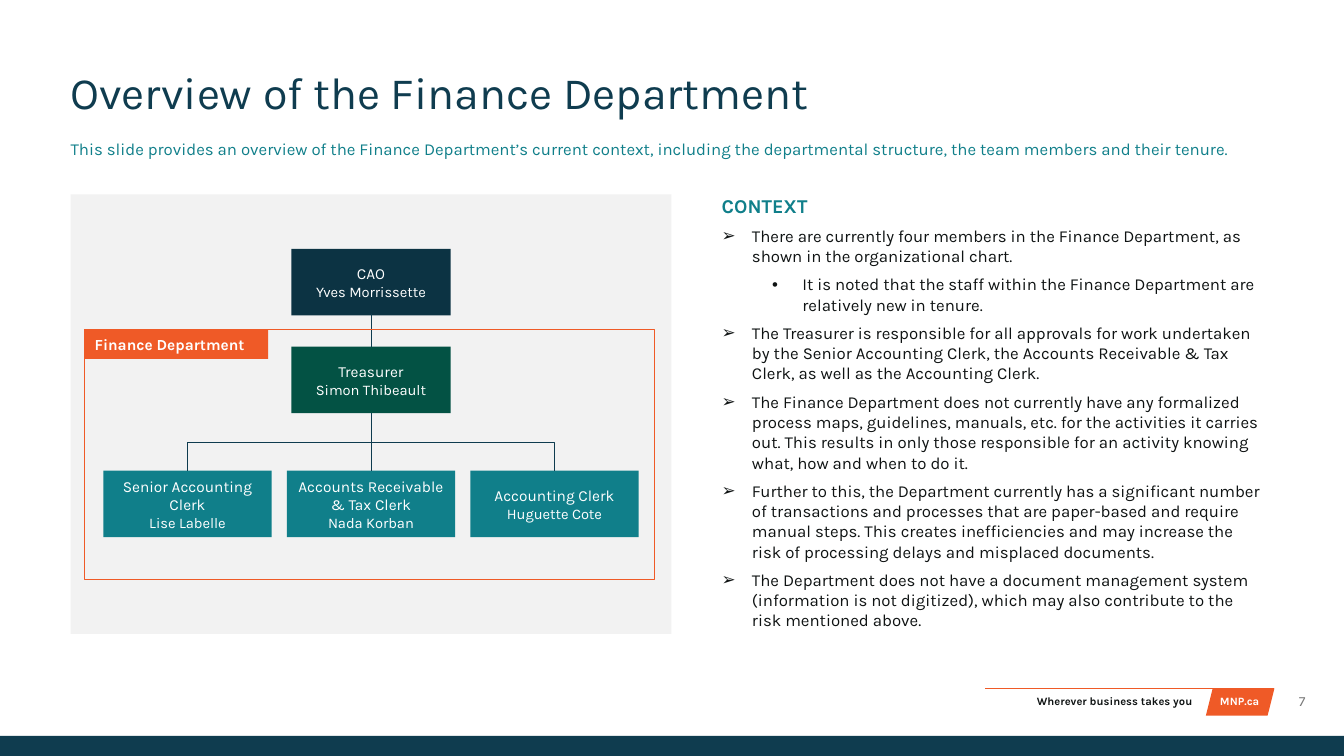
from lxml import etree
from pptx import Presentation
from pptx.dml.color import RGBColor
from pptx.enum.shapes import MSO_CONNECTOR, MSO_SHAPE
from pptx.enum.text import MSO_ANCHOR, PP_ALIGN
from pptx.oxml.ns import qn
from pptx.util import Inches, Pt

FONT = "Karla"
NAVY = RGBColor(0x0F, 0x3C, 0x4F)
DEEP = RGBColor(0x0C, 0x33, 0x43)
GREEN = RGBColor(0x03, 0x52, 0x44)
TEAL = RGBColor(0x10, 0x7F, 0x8A)
ORANGE = RGBColor(0xEF, 0x5A, 0x27)
PALE = RGBColor(0xF2, 0xF2, 0xF2)
INK = RGBColor(0x0F, 0x13, 0x13)
GREY = RGBColor(0x79, 0x79, 0x79)
WHITE = RGBColor(0xFF, 0xFF, 0xFF)

RECT, SLANT = MSO_SHAPE.RECTANGLE, MSO_SHAPE.PARALLELOGRAM
STRAIGHT, ELBOW = MSO_CONNECTOR.STRAIGHT, MSO_CONNECTOR.ELBOW
LEFT, CENTER, RIGHT = PP_ALIGN.LEFT, PP_ALIGN.CENTER, PP_ALIGN.RIGHT
TOP, MIDDLE = MSO_ANCHOR.TOP, MSO_ANCHOR.MIDDLE

# Text, bullet level
POINTS = [
    ("There are currently four members in the Finance Department, as shown in "
     "the organizational chart.", 0),
    ("It is noted that the staff within the Finance Department are relatively "
     "new in tenure.", 1),
    ("The Treasurer is responsible for all approvals for work undertaken by the "
     "Senior Accounting Clerk, the Accounts Receivable & Tax Clerk, as well as "
     "the Accounting Clerk.", 0),
    ("The Finance Department does not currently have any formalized process "
     "maps, guidelines, manuals, etc. for the activities it carries out. This "
     "results in only those responsible for an activity knowing what, how and "
     "when to do it.", 0),
    ("Further to this, the Department currently has a significant number of "
     "transactions and processes that are paper-based and require manual steps. "
     "This creates inefficiencies and may increase the risk of processing delays "
     "and misplaced documents.", 0),
    ("The Department does not have a document management system (information is "
     "not digitized), which may also contribute to the risk mentioned above.", 0),
]
CLERKS = [
    ("Senior Accounting Clerk", "Lise Labelle"),
    ("Accounts Receivable & Tax Clerk", "Nada Korban"),
    ("Accounting Clerk", "Huguette Cote"),
]


def add_run(para, text, size, color, bold=False):
    run = para.add_run()
    run.text = text
    font = run.font
    font.name, font.size, font.bold = FONT, Pt(size), bold
    font.color.rgb = color


def set_frame(frame, side, edge, anchor=TOP):
    frame.word_wrap = True
    frame.margin_left = frame.margin_right = Inches(side)
    frame.margin_top = frame.margin_bottom = Inches(edge)
    frame.vertical_anchor = anchor


def add_label(slide, box, text, size, color, align=LEFT, bold=False,
              edge=0.05, anchor=TOP):
    shape = slide.shapes.add_textbox(*map(Inches, box))
    set_frame(shape.text_frame, 0, edge, anchor)
    para = shape.text_frame.paragraphs[0]
    para.alignment = align
    add_run(para, text, size, color, bold)
    return para


def add_block(slide, box, fill=None, line=None, kind=RECT):
    shape = slide.shapes.add_shape(kind, *map(Inches, box))
    shape.shadow.inherit = False
    if fill is None:
        shape.fill.background()
    else:
        shape.fill.solid()
        shape.fill.fore_color.rgb = fill
    if line is None:
        shape.line.fill.background()
    else:
        shape.line.color.rgb = line
        shape.line.width = Pt(0.75)
    return shape


def add_card(slide, mid, top, width, fill, role, name):
    shape = add_block(slide, (mid - width / 2, top, width, 0.66), fill)
    frame = shape.text_frame
    set_frame(frame, 0.1, 0.05, MIDDLE)
    first, second = frame.paragraphs[0], frame.add_paragraph()
    first.alignment = second.alignment = CENTER
    add_run(first, role, 11, WHITE)
    add_run(second, name, 10.5, WHITE)


def add_line(slide, x1, y1, x2, y2, color=NAVY, width=0.5, kind=STRAIGHT):
    line = slide.shapes.add_connector(kind, *map(Inches, (x1, y1, x2, y2)))
    line.line.color.rgb = color
    line.line.width = Pt(width)
    etree.SubElement(line._element.spPr, qn("a:effectLst"))
    return line


def add_elbow(slide, x1, y1, x2, y2):
    """Join two points by a path that leaves and arrives vertically."""
    mid_x, mid_y = (x1 + x2) / 2, (y1 + y2) / 2
    side = 1 if x2 > x1 else -1
    dx, dy = side * (y2 - y1) / 2, abs(x2 - x1) / 2
    line = add_line(slide, mid_x + dx, mid_y - dy, mid_x - dx, mid_y + dy,
                    kind=ELBOW)
    turn = 270 if side > 0 else 90
    line._element.spPr.find(qn("a:xfrm")).set("rot", str(turn * 60000))


def add_bullet(para, level):
    para.level = level
    props = para._p.get_or_add_pPr()
    props.set("marL", str(Inches(0.3 + 0.5 * level)))
    props.set("indent", str(Inches(-0.3)))
    etree.SubElement(props, qn("a:buFont")).set("typeface", "Arial")
    etree.SubElement(props, qn("a:buChar")).set("char", "➢•"[level])


def add_footer(slide):
    add_block(slide, (11.96, 6.83, 0.68, 0.27), ORANGE, kind=SLANT)
    add_label(slide, (12, 6.84, 0.59, 0.24), "MNP.ca", 8, WHITE, CENTER, True)
    add_line(slide, 9.77, 6.83, 12.64, 6.83, ORANGE, 1)
    add_block(slide, (0, 7.3, 13.33, 0.2), NAVY)
    add_label(slide, (9.77, 6.84, 2.06, 0.24), "Wherever business takes you",
              8, INK, RIGHT, True)
    add_label(slide, (12.64, 6.82, 0.55, 0.27), "7", 10, GREY, CENTER,
              anchor=MIDDLE)


def add_head(slide):
    title = slide.shapes.title
    title.left, title.top = Inches(0.7), Inches(0.7)
    title.width, title.height = Inches(11.93), Inches(0.48)
    set_frame(title.text_frame, 0, 0)
    para = title.text_frame.paragraphs[0]
    para.alignment, para.line_spacing = LEFT, 0.9
    add_run(para, "Overview of the Finance Department", 32, NAVY)
    lead = add_label(
        slide, (0.7, 1.36, 11.94, 0.2),
        "This slide provides an overview of the Finance Department’s current "
        "context, including the departmental structure, the team members and "
        "their tenure.", 12, TEAL, edge=0)
    lead.line_spacing = 1.1


def add_context(slide):
    box = slide.shapes.add_textbox(*map(Inches, (7.06, 1.87, 5.58, 4.48)))
    frame = box.text_frame
    set_frame(frame, 0.1, 0.05)
    head = frame.paragraphs[0]
    head.space_after = Pt(6)
    add_run(head, "CONTEXT", 14, TEAL, True)
    for text, level in POINTS:
        para = frame.add_paragraph()
        add_bullet(para, level)
        para.space_after = Pt(6)
        add_run(para, text, 12, INK)


def add_chart(slide):
    mid, step = 3.68, 1.82
    add_block(slide, (0.7, 1.93, 5.96, 4.36), PALE)
    # Cards
    add_card(slide, mid, 2.47, 1.58, DEEP, "CAO", "Yves Morrissette")
    add_card(slide, mid, 3.44, 1.58, GREEN, "Treasurer", "Simon Thibeault")
    for i, (role, name) in enumerate(CLERKS):
        add_card(slide, mid + (i - 1) * step, 4.67, 1.67, TEAL, role, name)
    # Reporting lines
    add_elbow(slide, mid, 4.1, mid - step, 4.67)
    add_elbow(slide, mid, 4.1, mid + step, 4.67)
    add_line(slide, mid, 4.1, mid, 4.67)
    add_line(slide, mid, 3.12, mid, 3.44)
    # Department frame and tag
    add_block(slide, (0.84, 3.27, 5.65, 2.48), line=ORANGE)
    tag = add_block(slide, (0.84, 3.27, 1.82, 0.29), ORANGE)
    set_frame(tag.text_frame, 0.1, 0.05, MIDDLE)
    para = tag.text_frame.paragraphs[0]
    para.alignment = LEFT
    add_run(para, "Finance Department", 11, WHITE, True)


def main():
    deck = Presentation()
    deck.slide_width, deck.slide_height = Inches(13.33), Inches(7.5)
    slide = deck.slides.add_slide(deck.slide_layouts[5])
    add_footer(slide)
    add_head(slide)
    add_context(slide)
    add_chart(slide)
    deck.save("out.pptx")


if __name__ == "__main__":
    main()
